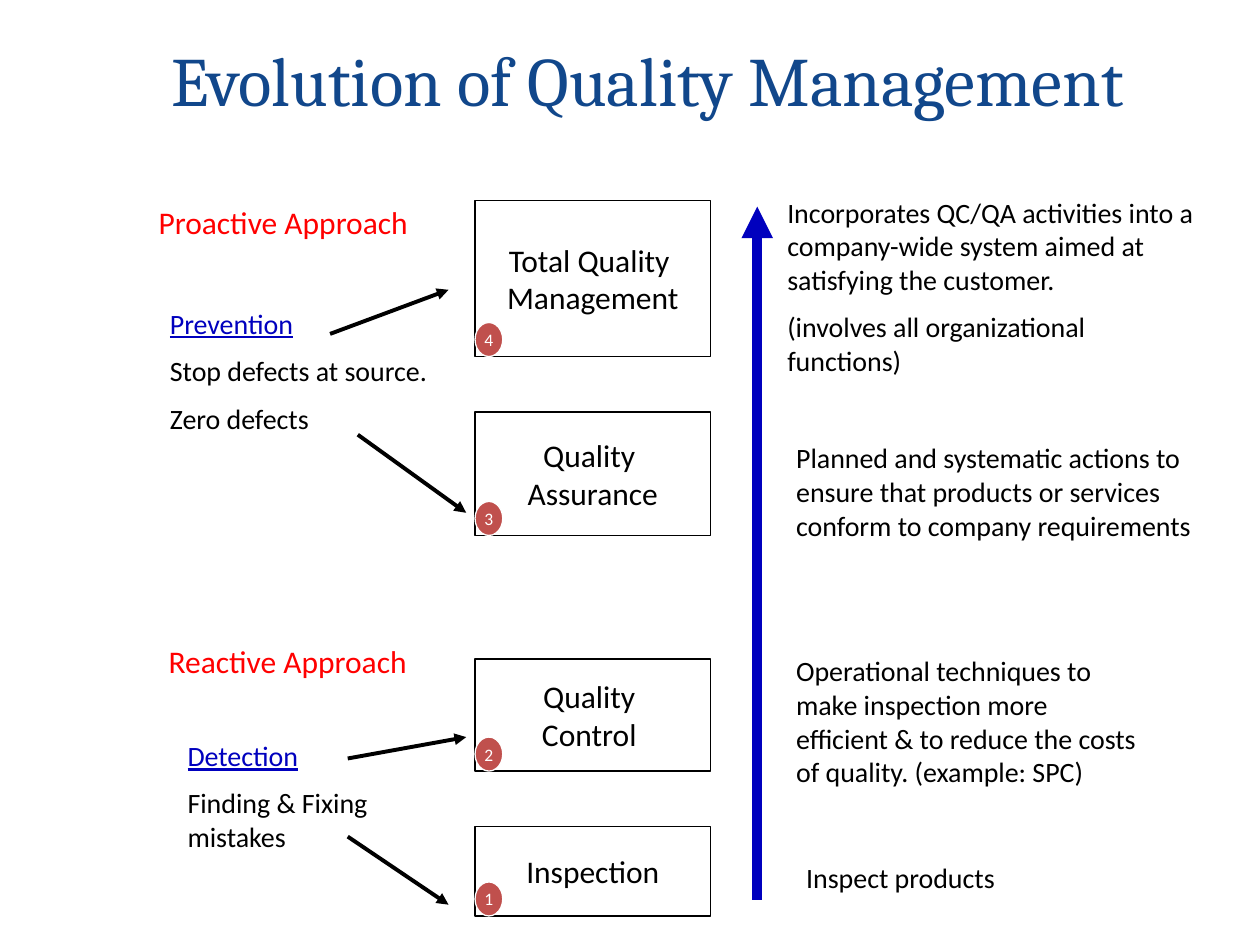
from lxml import etree
from pptx import Presentation, util as u
from pptx.dml.color import RGBColor
from pptx.enum import shapes, text
from pptx.oxml import ns

COLS, ROWS = 10, 7.5
CELL = u.Inches(1)
BLACK, WHITE, BLUE, RED = "000000", "FFFFFF", "0000BE", "FF0000"
BADGE, NAVY = "C0504D", "11478B"
BOX_X, BOX_W = 3.77, 1.87
BADGE_W, BADGE_H = 0.22, 0.27

STAGES = [
    (1, 6.56, 0.71, ["Inspection"]),
    (2, 5.23, 0.89, ["Quality ", "Control "]),
    (3, 3.27, 0.98, ["Quality ", "Assurance"]),
    (4, 1.59, 1.24, ["Total Quality ", "Management"]),
]
NOTES = [
    ((6.3, 6.78, 1.94, 0.37), ["Inspect products"]),
    ((6.22, 5.14, 2.95, 1.18), ["Operational techniques to make inspection more efficient "
                                "& to reduce the costs of quality. (example: SPC)"]),
    ((6.22, 3.45, 3.39, 0.91), ["Planned and systematic actions to ensure that products or "
                                "services conform to company requirements"]),
    ((6.15, 1.5, 3.46, 1.58), ["Incorporates QC/QA activities into a company-wide system "
                               "aimed at satisfying the customer.",
                               "(involves all organizational functions)"]),
]


def grid(*cells):
    """Turn grid columns and rows into slide lengths."""
    return [round(c * CELL) for c in cells]


def rgb(code):
    """Return the colour for a hex string."""
    return RGBColor.from_string(code)


def write(tf, lines, size, color, font="Calibri", align=None, gap=0, link=False):
    """Fill a text frame, one paragraph per line; link marks the first line."""
    for i, line in enumerate(lines):
        p = tf.paragraphs[0] if i == 0 else tf.add_paragraph()
        p.alignment = align
        if i:
            p.space_before = u.Pt(gap)
        r = p.add_run()
        r.text = line
        r.font.size, r.font.name = u.Pt(size), font
        marked = link and i == 0
        r.font.color.rgb = rgb(BLUE if marked else color)
        if marked:
            r.font.underline = True


def label(s, box, lines, size=16, color=BLACK, link=False):
    """Add a wrapped text box."""
    tf = s.shapes.add_textbox(*grid(*box)).text_frame
    tf.word_wrap = True
    write(tf, lines, size, color, gap=size / 2, link=link)


def panel(s, kind, box, fill, line, lines, size, color):
    """Add a filled shape with centred text."""
    sp = s.shapes.add_shape(kind, *grid(*box))
    sp.shadow.inherit = False
    sp.fill.solid()
    sp.fill.fore_color.rgb = rgb(fill)
    sp.line.color.rgb = rgb(line)
    sp.line.width = u.Pt(0.75)
    tf = sp.text_frame
    tf.word_wrap = False
    tf.vertical_anchor = text.MSO_ANCHOR.MIDDLE
    write(tf, lines, size, color, align=text.PP_ALIGN.CENTER)


def arrow(s, start, end, width=2.25, color=BLACK):
    """Add a straight arrow pointing at end."""
    c = s.shapes.add_connector(shapes.MSO_CONNECTOR.STRAIGHT, *grid(*start, *end))
    c.line.color.rgb = rgb(color)
    c.line.width = u.Pt(width)
    etree.SubElement(c.line._get_or_add_ln(), ns.qn("a:tailEnd"), type="triangle")
    etree.SubElement(c._element.spPr, ns.qn("a:effectLst"))


def stage(s, box, number, lines):
    """Draw a stage with its number in the lower left corner."""
    x, y, w, h = box
    panel(s, shapes.MSO_SHAPE.RECTANGLE, box, WHITE, BLACK, lines, 18, BLACK)
    badge = (x, y + h - BADGE_H, BADGE_W, BADGE_H)
    panel(s, shapes.MSO_SHAPE.OVAL, badge, BADGE, WHITE, [str(number)], 10, WHITE)


def approach(s, box, heading, body, lines, arrows):
    """Draw a heading, an indented body and arrows, all offset from the box."""
    x, y, w, h = box
    label(s, box, [heading], 18, RED)
    dx, dy, bw, bh = body
    label(s, (x + dx, y + dy, bw, bh), lines, link=True)
    for x1, y1, x2, y2 in arrows:
        arrow(s, (x + x1, y + y1), (x + x2, y + y2))


def title(s, box, words):
    """Place and format the title."""
    sp = s.shapes.title
    sp.left, sp.top, sp.width, sp.height = grid(*box)
    tf = sp.text_frame
    tf.word_wrap = True
    tf.auto_size = text.MSO_AUTO_SIZE.NONE
    tf.vertical_anchor = text.MSO_ANCHOR.MIDDLE
    write(tf, [words], 39.6, NAVY, "Cambria", text.PP_ALIGN.CENTER)


def main():
    """Build the slide and save it."""
    prs = Presentation()
    prs.slide_width, prs.slide_height = grid(COLS, ROWS)
    s = prs.slides.add_slide(prs.slide_layouts[5])
    title(s, (0.81, 0.08, 8.66, 1.09), "Evolution of Quality Management")
    for number, top, height, lines in STAGES:
        stage(s, (BOX_X, top, BOX_W, height), number, lines)
    approach(s, (1.16, 1.56, 2.38, 0.4), "Proactive Approach", (0.09, 0.82, 2.31, 1.18),
             ["Prevention", "Stop defects at source.", "Zero defects"],
             [(1.46, 1.09, 2.4, 0.74), (1.68, 1.89, 2.54, 2.51)])
    approach(s, (1.24, 5.05, 2.16, 0.4), "Reactive Approach", (0.15, 0.76, 2.16, 1.04),
             ["Detection", "Finding & Fixing mistakes"],
             [(1.52, 0.97, 2.46, 0.8), (1.52, 1.59, 2.32, 2.13)])
    for box, lines in NOTES:
        label(s, box, lines)
    arrow(s, (6.01, 7.14), (6.01, 1.64), 6, BLUE)
    prs.save("out.pptx")


if __name__ == "__main__":
    main()
